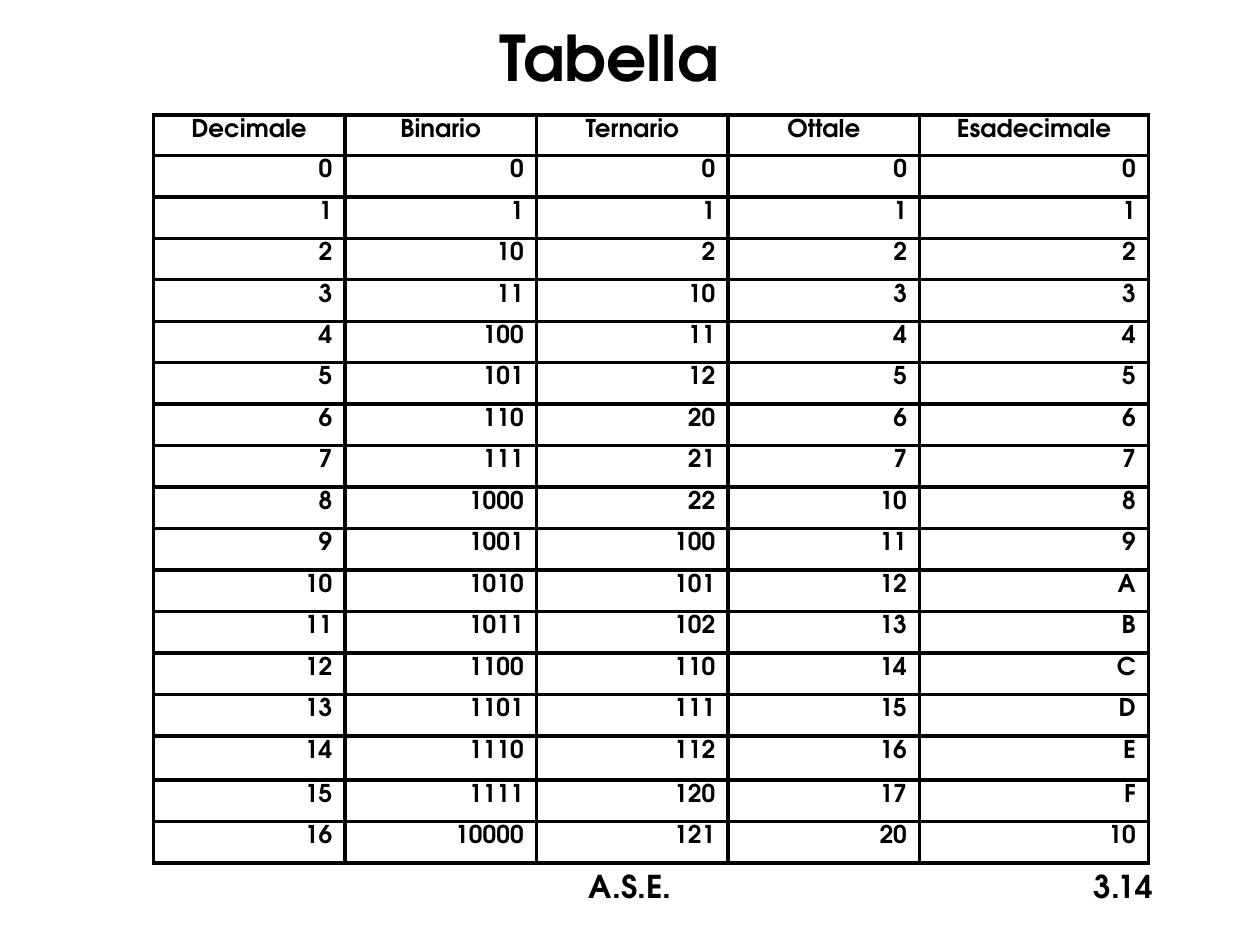
import dataclasses
import pptx
import pptx.dml.color
import pptx.enum.text
import pptx.oxml
import pptx.oxml.ns
import pptx.util

HUES = {"ink": "000000", "page": "FFFFFF"}
FACE = "TeX Gyre Adventor"
COLS, ROWS = 120, 90
BASES = {"Decimale": 10, "Binario": 2, "Ternario": 3, "Ottale": 8, "Esadecimale": 16}
LAST = 16
WIDTHS = [18.25] * 4 + [21.8]
HEIGHTS = [3.85] + [3.95] * 14 + [4.2] + [3.95] * 2
INSET = 0.65
ALIGN = pptx.enum.text.PP_ALIGN

deck = pptx.Presentation()
deck.slide_width = pptx.util.Inches(10)
deck.slide_height = pptx.util.Inches(7.5)


@dataclasses.dataclass
class Area:
    col: float
    row: float
    wide: float
    high: float

    def box(self) -> tuple[int, int, int, int]:
        return across(self.col), down(self.row), across(self.wide), down(self.high)


@dataclasses.dataclass
class Label:
    text: str
    area: Area
    align: ALIGN


LABELS = [
    Label("A.S.E.", Area(41, 82, 38, 6), ALIGN.CENTER),
    Label("3.14", Area(86, 82, 25, 6), ALIGN.RIGHT),
]


def across(cols: float) -> int:
    return round(deck.slide_width * cols / COLS)


def down(rows: float) -> int:
    return round(deck.slide_height * rows / ROWS)


def digits(num: int, base: int) -> str:
    head = digits(num // base, base) if num >= base else ""
    return head + "0123456789ABCDEF"[num % base]


def write(frame, text: str, size: float, align: ALIGN) -> None:
    frame.text = text
    line = frame.paragraphs[0]
    line.alignment = align
    font = line.runs[0].font
    font.name, font.size, font.bold = FACE, pptx.util.Pt(size), True
    font.color.rgb = pptx.dml.color.RGBColor.from_string(HUES["ink"])


def edge(cell) -> None:
    props = cell._tc.get_or_add_tcPr()
    for spot, side in enumerate("LRTB"):
        props.insert(spot, pptx.oxml.parse_xml(
            f'<a:ln{side} {pptx.oxml.ns.nsdecls("a")} w="{pptx.util.Pt(2.25)}">'
            f'<a:solidFill><a:srgbClr val="{HUES["ink"]}"/></a:solidFill></a:ln{side}>'))


def label(slide, item: Label) -> None:
    frame = slide.shapes.add_textbox(*item.area.box()).text_frame
    frame.word_wrap = True
    write(frame, item.text, 18, item.align)


def title(slide, text: str, area: Area) -> None:
    shape = slide.shapes.title
    shape.left, shape.top, shape.width, shape.height = area.box()
    frame = shape.text_frame
    frame.auto_size = pptx.enum.text.MSO_AUTO_SIZE.NONE
    frame.vertical_anchor = pptx.enum.text.MSO_ANCHOR.MIDDLE
    write(frame, text, 36, ALIGN.CENTER)


def table(slide, data: list[list[str]], col: float, row: float) -> None:
    area = Area(col, row, sum(WIDTHS), sum(HEIGHTS))
    grid = slide.shapes.add_table(len(data), len(WIDTHS), *area.box()).table
    grid.first_row = grid.horz_banding = False
    for part, wide in zip(grid.columns, WIDTHS):
        part.width = across(wide)
    for part, high in zip(grid.rows, HEIGHTS):
        part.height = down(high)
    for y, texts in enumerate(data):
        for x, text in enumerate(texts):
            cell = grid.cell(y, x)
            cell.margin_top, cell.margin_bottom = down(INSET), 0
            cell.fill.background()
            edge(cell)
            write(cell.text_frame, text, 14, ALIGN.RIGHT if y else ALIGN.CENTER)
            cell.text_frame.paragraphs[0].line_spacing = 0.85


def main() -> None:
    slide = deck.slides.add_slide(deck.slide_layouts[5])
    back = slide.background.fill
    back.solid()
    back.fore_color.rgb = pptx.dml.color.RGBColor.from_string(HUES["page"])
    title(slide, "Tabella", Area(0, 2.75, 116, 5.2))
    for item in LABELS:
        label(slide, item)
    data = [list(BASES)]
    data += [[digits(num, base) for base in BASES.values()] for num in range(LAST + 1)]
    table(slide, data, 14.6, 10.95)
    deck.save("out.pptx")


if __name__ == "__main__":
    main()
